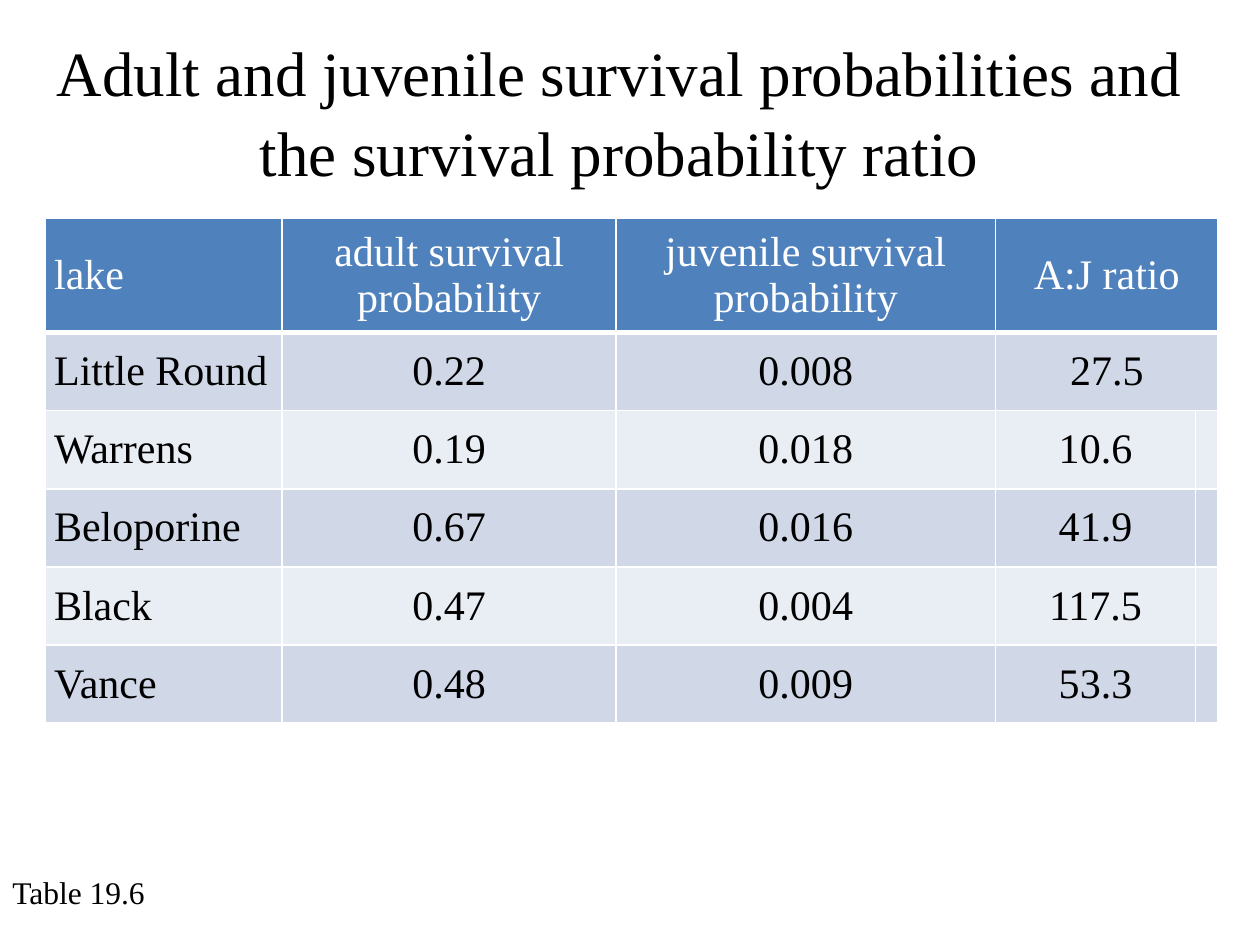
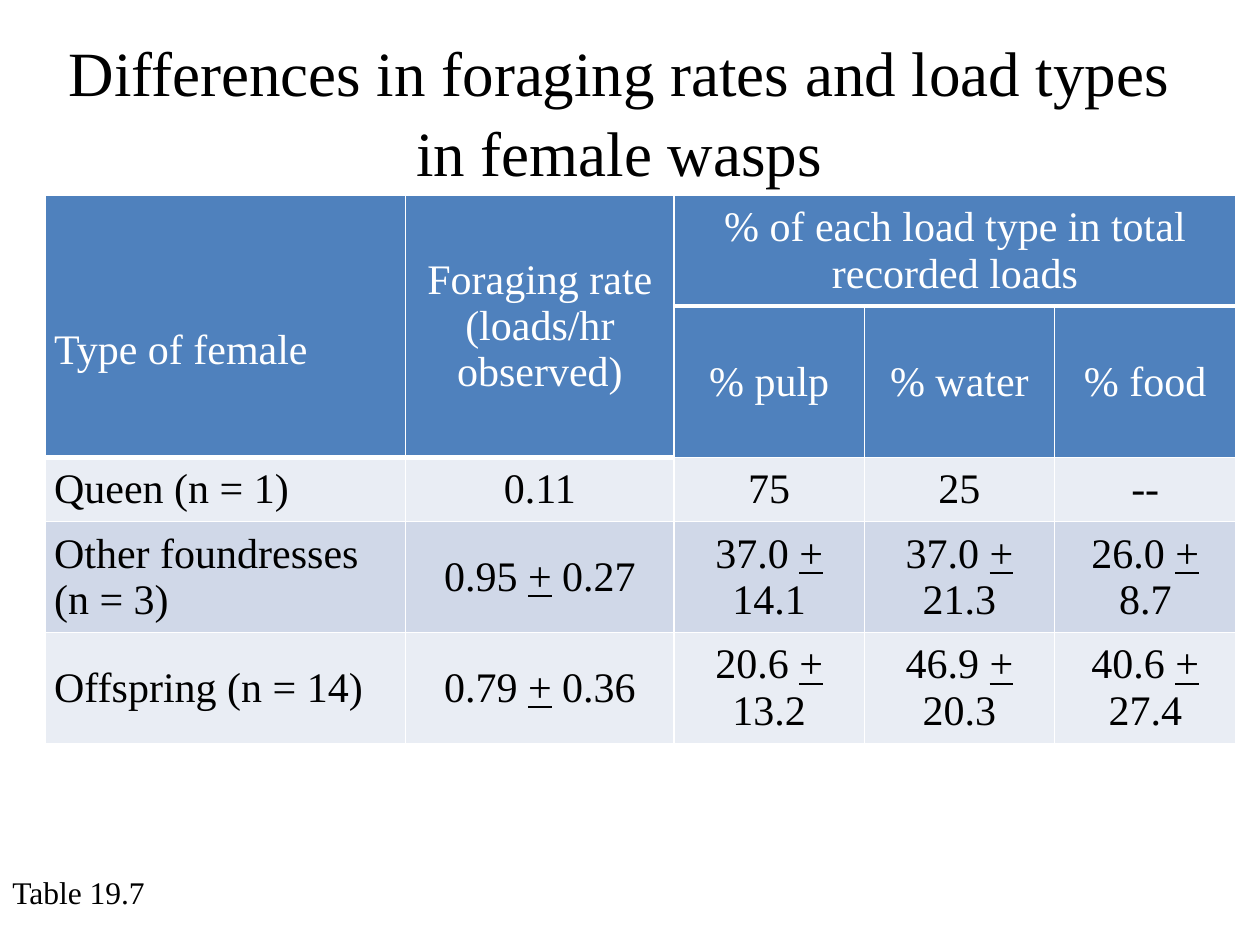
from dataclasses import dataclass, field

import lxml.etree
import pptx
import pptx.dml.color
import pptx.enum.text
import pptx.oxml.ns
import pptx.util

COLUMNS, ROWS = 100, 75
SLIDE_WIDTH = pptx.util.Inches(10)
SLIDE_HEIGHT = pptx.util.Inches(7.5)
FONT = "Times New Roman"
COLORS = {
    "text": "000000",
    "header": "4F81BD",
    "header text": "FFFFFF",
    "dark band": "D0D8E8",
    "light band": "E9EDF4",
    "rule": "FFFFFF",
}
LEFT = pptx.enum.text.PP_ALIGN.LEFT
CENTER = pptx.enum.text.PP_ALIGN.CENTER


@dataclass(frozen=True)
class Area:
    """A rectangle in grid columns and rows."""
    left: float
    top: float
    width: float
    height: float


@dataclass(frozen=True)
class DataTable:
    left: float
    top: float
    widths: list[float]
    heights: list[float]
    cells: list[list[str]]
    bands: tuple[str, str]
    header_rows: int = 1
    # (row, column) of a merged cell -> (rows, columns) it covers
    spans: dict[tuple[int, int], tuple[int, int]] = field(default_factory=dict)
    # (row, column) -> grid rows kept free above the text
    top_margins: dict[tuple[int, int], float] = field(default_factory=dict)


@dataclass(frozen=True)
class TableSlide:
    title: str
    caption: str
    table: DataTable


TITLE_AREA = Area(2, 1.9, 94.3, 13.1)
CAPTION_AREA = Area(0, 68.8, 13.3, 4)

SURVIVAL = TableSlide(
    "Adult and juvenile survival probabilities and the survival probability ratio",
    "Table 19.6",
    DataTable(
        3.6, 17.3,
        widths=[18.8, 26.5, 30.1, 15.9, 1.5],
        heights=[9.1] + [6.2] * 5,
        cells=[
            ["lake", "adult survival probability",
             "juvenile survival probability", "A:J ratio", ""],
            ["Little Round", "0.22", "0.008", "27.5", ""],
            ["Warrens", "0.19", "0.018", "10.6", ""],
            ["Beloporine", "0.67", "0.016", "41.9", ""],
            ["Black", "0.47", "0.004", "117.5", ""],
            ["Vance", "0.48", "0.009", "53.3", ""],
        ],
        bands=("dark band", "light band"),
        spans={(0, 3): (1, 2), (1, 3): (1, 2)},
    ),
)

FORAGING = TableSlide(
    "Differences in foraging rates and load types in female wasps",
    "Table 19.7",
    DataTable(
        3.6, 15.5,
        widths=[28.6, 21.3, 15.1, 15.1, 14.4],
        heights=[8.8, 12, 5.1, 8.8, 8.8],
        cells=[
            ["Type of female", "Foraging rate (loads/hr observed)",
             "% of each load type in total recorded loads", "", ""],
            ["", "", "% pulp", "% water", "% food"],
            ["Queen (n = 1)", "0.11", "75", "25", "--"],
            ["Other foundresses (n = 3)", "0.95 + 0.27",
             "37.0 + 14.1", "37.0 + 21.3", "26.0 + 8.7"],
            ["Offspring (n = 14)", "0.79 + 0.36",
             "20.6 + 13.2", "46.9 + 20.3", "40.6 + 27.4"],
        ],
        bands=("light band", "dark band"),
        header_rows=2,
        spans={(0, 0): (2, 1), (0, 1): (2, 1), (0, 2): (1, 3)},
        top_margins={(0, 0): 3.8},
    ),
)


def across(columns: float) -> int:
    return round(SLIDE_WIDTH * columns / COLUMNS)


def down(rows: float) -> int:
    return round(SLIDE_HEIGHT * rows / ROWS)


def rgb(role: str) -> pptx.dml.color.RGBColor:
    return pptx.dml.color.RGBColor.from_string(COLORS[role])


def write(paragraph, text: str, size: float, role: str, alignment) -> None:
    """Fill a paragraph, underlining a plus sign that stands for plus-minus."""
    paragraph.alignment = alignment
    font = paragraph.font
    font.name, font.size, font.bold = FONT, pptx.util.Pt(size), False
    font.color.rgb = rgb(role)
    for part in text.partition("+"):
        if part:
            run = paragraph.add_run()
            run.text = part
            if part == "+":
                run.font.underline = True


def add_text(slide, area: Area, text: str, size: float, alignment,
             wrap: bool = True, line_spacing: float = 1.0) -> None:
    box = slide.shapes.add_textbox(across(area.left), down(area.top),
                                   across(area.width), down(area.height))
    box.text_frame.word_wrap = wrap
    paragraph = box.text_frame.paragraphs[0]
    paragraph.line_spacing = line_spacing
    write(paragraph, text, size, "text", alignment)


def rule_cell(cell, bottom_width: float) -> None:
    """Draw the four borders; they must precede the fill in the XML."""
    properties = cell._tc.get_or_add_tcPr()
    sides = {"lnL": 1, "lnR": 1, "lnT": 1, "lnB": bottom_width}
    for position, (side, width) in enumerate(sides.items()):
        line = lxml.etree.Element(pptx.oxml.ns.qn(f"a:{side}"),
                                  w=str(pptx.util.Pt(width)))
        fill = lxml.etree.SubElement(line, pptx.oxml.ns.qn("a:solidFill"))
        lxml.etree.SubElement(fill, pptx.oxml.ns.qn("a:srgbClr"),
                              val=COLORS["rule"])
        properties.insert(position, line)


def add_data_table(slide, data: DataTable) -> None:
    table = slide.shapes.add_table(
        len(data.heights), len(data.widths), across(data.left), down(data.top),
        across(sum(data.widths)), down(sum(data.heights))).table
    table.first_row = table.horz_banding = False
    for column, width in zip(table.columns, data.widths):
        column.width = across(width)
    for row, height in zip(table.rows, data.heights):
        row.height = down(height)

    for r, texts in enumerate(data.cells):
        is_header = r < data.header_rows
        band = "header" if is_header else data.bands[(r - data.header_rows) % 2]
        for c, text in enumerate(texts):
            cell = table.cell(r, c)
            cell.margin_left = cell.margin_right = across(0.7)
            cell.margin_top = down(data.top_margins.get((r, c), 0))
            cell.margin_bottom = 0
            cell.vertical_anchor = pptx.enum.text.MSO_ANCHOR.MIDDLE
            cell.fill.solid()
            cell.fill.fore_color.rgb = rgb(band)
            rule_cell(cell, bottom_width=3 if r == 0 else 1)
            write(cell.text_frame.paragraphs[0], text, 24,
                  "header text" if is_header else "text",
                  CENTER if c else LEFT)

    for (r, c), (rows, columns) in data.spans.items():
        table.cell(r, c).merge(table.cell(r + rows - 1, c + columns - 1))


def add_table_slide(deck, content: TableSlide) -> None:
    slide = deck.slides.add_slide(deck.slide_layouts[6])
    add_text(slide, TITLE_AREA, content.title, 36, CENTER, line_spacing=1.05)
    add_text(slide, CAPTION_AREA, content.caption, 18, LEFT, wrap=False)
    add_data_table(slide, content.table)


def main() -> None:
    deck = pptx.Presentation()
    deck.slide_width, deck.slide_height = SLIDE_WIDTH, SLIDE_HEIGHT
    for content in (SURVIVAL, FORAGING):
        add_table_slide(deck, content)
    deck.save("out.pptx")


if __name__ == "__main__":
    main()
